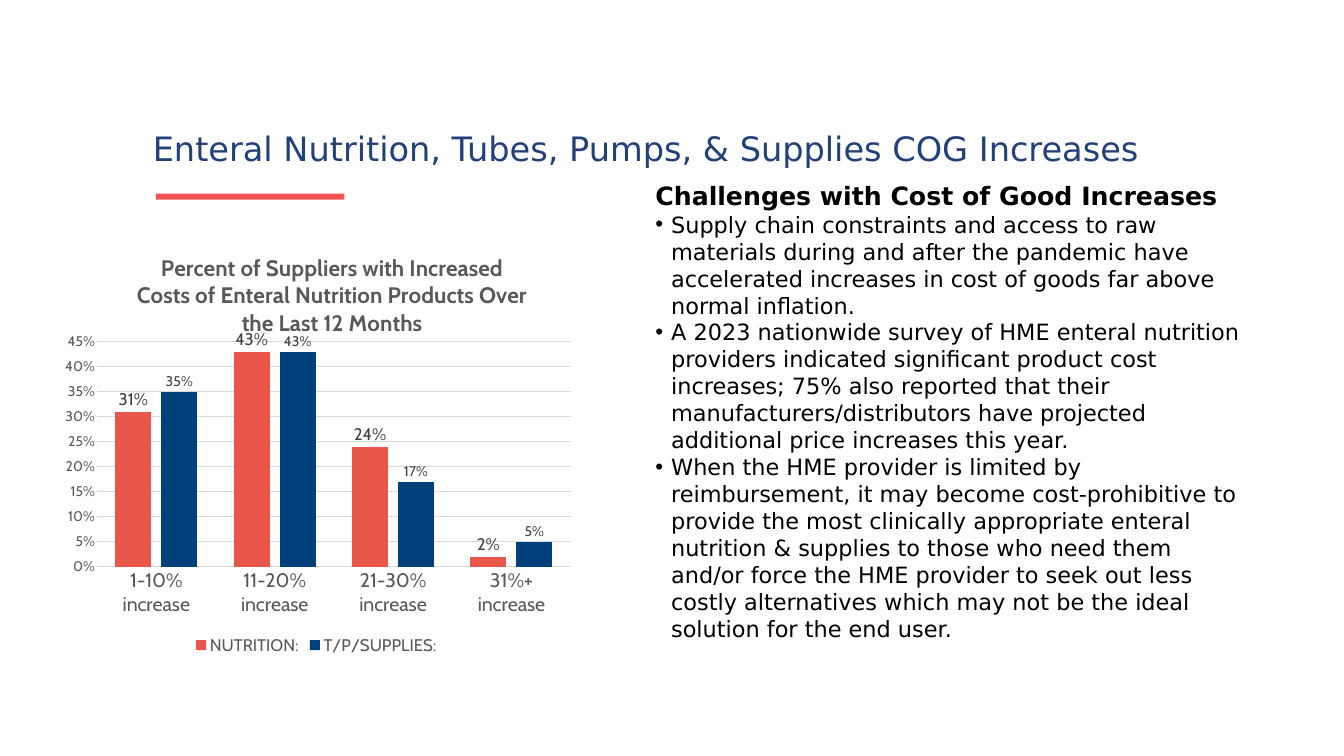
from lxml import etree
from pptx import Presentation
from pptx.chart.data import CategoryChartData
from pptx.dml.color import RGBColor
from pptx.enum import chart as kinds, shapes, text
from pptx.oxml import ns
from pptx.util import Pt

NAVY = RGBColor(0x22, 0x41, 0x7B)
RED = RGBColor(0xF7, 0x51, 0x52)
CORAL = RGBColor(0xE9, 0x56, 0x4A)
BLUE = RGBColor(0x00, 0x41, 0x7C)
BLACK = RGBColor(0, 0, 0)
GREY = RGBColor(0x59, 0x59, 0x59)
DARK = RGBColor(0x40, 0x40, 0x40)
PALE = RGBColor(0xD9, 0xD9, 0xD9)
SANS, CABIN = "DejaVu Sans", "Cabin"

TITLE = "Enteral Nutrition, Tubes, Pumps, & Supplies COG Increases"
HEAD = "Challenges with Cost of Good Increases"
POINTS = [
    "Supply chain constraints and access to raw materials during and after the pandemic "
    "have accelerated increases in cost of goods far above normal inflation.",
    "A 2023 nationwide survey of HME enteral nutrition providers indicated significant "
    "product cost increases; 75% also reported that their manufacturers/distributors "
    "have projected additional price increases this year.",
    "When the HME provider is limited by reimbursement, it may become cost-prohibitive to "
    "provide the most clinically appropriate enteral nutrition & supplies to those who "
    "need them and/or force the HME provider to seek out less costly alternatives which "
    "may not be the ideal solution for the end user.",
]
CHART = "Percent of Suppliers with Increased Costs of Enteral Nutrition Products Over the Last 12 Months"
CATS = ["1-10% increase", "11-20% increase", "21-30% increase", "31%+ increase"]
SERIES = [  # name, values, fill, label size
    ("NUTRITION:", (0.31, 0.43, 0.24, 0.02), CORAL, 24),
    ("T/P/SUPPLIES:", (0.35, 0.43, 0.17, 0.05), BLUE, 20),
]


def style(font, size, color, name, bold=False):
    for key, value in {"size": Pt(size), "name": name, "bold": bold}.items():
        setattr(font, key, value)
    font.color.rgb = color


def place(shape, box):
    for key, value in zip(("left", "top", "width", "height"), box):
        setattr(shape, key, Pt(value))


def setup(shape, box):
    place(shape, box)
    frame = shape.text_frame
    for key, value in {"word_wrap": True, "auto_size": text.MSO_AUTO_SIZE.NONE,
                       "vertical_anchor": text.MSO_ANCHOR.TOP}.items():
        setattr(frame, key, value)
    return frame


def bullet(para, mark=None, indent=0):
    props = para._p.get_or_add_pPr()
    props.set("marL", str(Pt(indent)))
    props.set("indent", str(-Pt(indent)))
    if mark:
        etree.SubElement(props, ns.qn("a:buChar")).set("char", mark)
    else:
        etree.SubElement(props, ns.qn("a:buNone"))


def add_title(slide, box):
    x, y, w, h = box
    # Title line
    para = setup(slide.shapes.title, box).paragraphs[0]
    para.text = TITLE
    para.alignment = text.PP_ALIGN.LEFT
    para.line_spacing = Pt(130)
    style(para.font, 48, NAVY, SANS)
    # Accent rule
    rule = slide.shapes.add_shape(shapes.MSO_SHAPE.RECTANGLE, Pt(x + 11.5), Pt(y + h + 6.5),
                                  Pt(269.3), Pt(8.6))
    rule.shadow.inherit = False
    rule.fill.solid()
    rule.fill.fore_color.rgb = RED
    rule.line.fill.background()


def add_list(slide, box):
    frame = setup(slide.placeholders[1], box)
    for i, line in enumerate([HEAD] + POINTS):
        para = frame.paragraphs[0] if i == 0 else frame.add_paragraph()
        para.text = line
        para.space_before = Pt(0)
        if i:
            para.line_spacing = Pt(38.5)
            bullet(para, "•", 22.5)
            style(para.font, 32, BLACK, SANS)
        else:
            bullet(para)
            style(para.font, 36, BLACK, SANS, True)


def set_layout(parent, after, inner=False, **parts):
    """Give a chart part a manual position, as fractions of the chart."""
    for old in parent.findall(ns.qn("c:layout")):
        parent.remove(old)
    outer = etree.Element(ns.qn("c:layout"))
    manual = etree.SubElement(outer, ns.qn("c:manualLayout"))
    if inner:
        etree.SubElement(manual, ns.qn("c:layoutTarget")).set("val", "inner")
    for key in ("xMode", "yMode"):
        etree.SubElement(manual, ns.qn("c:" + key)).set("val", "edge")
    for key, value in parts.items():
        etree.SubElement(manual, ns.qn("c:" + key)).set("val", str(value))
    if after is None:
        parent.insert(0, outer)
    else:
        after.addnext(outer)


def add_bars(slide, box):
    data = CategoryChartData(number_format="0%")
    data.categories = CATS
    for name, values, _, _ in SERIES:
        data.add_series(name, values)
    chart = slide.shapes.add_chart(kinds.XL_CHART_TYPE.COLUMN_CLUSTERED,
                                   *map(Pt, box), data).chart
    style(chart.font, 10, BLACK, CABIN)

    # Title and plot area
    para = chart.chart_title.text_frame.paragraphs[0]
    run = para.add_run()
    run.text = CHART
    style(run.font, 32, GREY, CABIN, True)
    title = chart.chart_title._element
    set_layout(title, title.find(ns.qn("c:tx")), x=0.14, y=0.05)
    area = chart._chartSpace.chart.plotArea
    set_layout(area, None, True, x=0.07, y=0.266, w=0.929, h=0.521)

    # Bars and labels
    plot = chart.plots[0]
    for key, value in {"gap_width": 100, "overlap": -27, "vary_by_categories": False}.items():
        setattr(plot, key, value)
    for bars, (_, _, color, size) in zip(plot.series, SERIES):
        bars.format.fill.solid()
        bars.format.fill.fore_color.rgb = color
        labels = bars.data_labels
        for key, value in {"show_value": True, "number_format": "0%",
                           "number_format_is_linked": False,
                           "position": kinds.XL_LABEL_POSITION.OUTSIDE_END}.items():
            setattr(labels, key, value)
        style(labels.font, size, DARK, CABIN)

    # Axes
    cat, val = chart.category_axis, chart.value_axis
    for axis, size in ((cat, 28), (val, 20)):
        axis.major_tick_mark = axis.minor_tick_mark = kinds.XL_TICK_MARK.NONE
        style(axis.tick_labels.font, size, GREY, CABIN)
    for key, value in {"minimum_scale": 0, "maximum_scale": 0.45, "major_unit": 0.05}.items():
        setattr(val, key, value)
    val.tick_labels.number_format = "0%"
    val.tick_labels.number_format_is_linked = False
    val.format.line.fill.background()
    for line in (cat.format.line, val.major_gridlines.format.line):
        line.color.rgb = PALE
        line.width = Pt(0.75)

    # Legend
    chart.has_legend = True
    chart.legend.position = kinds.XL_LEGEND_POSITION.BOTTOM
    chart.legend.include_in_layout = False
    style(chart.legend.font, 24, GREY, CABIN)


def main():
    deck = Presentation()
    deck.slide_width, deck.slide_height = Pt(1919.5), Pt(1080)
    slide = deck.slides.add_slide(deck.slide_layouts[1])
    add_title(slide, (211, 106.5, 1557.4, 163.5))
    add_list(slide, (928.8, 254.2, 851.8, 504.7))
    add_bars(slide, (87.8, 324, 727.9, 617))
    deck.save("out.pptx")


if __name__ == "__main__":
    main()
